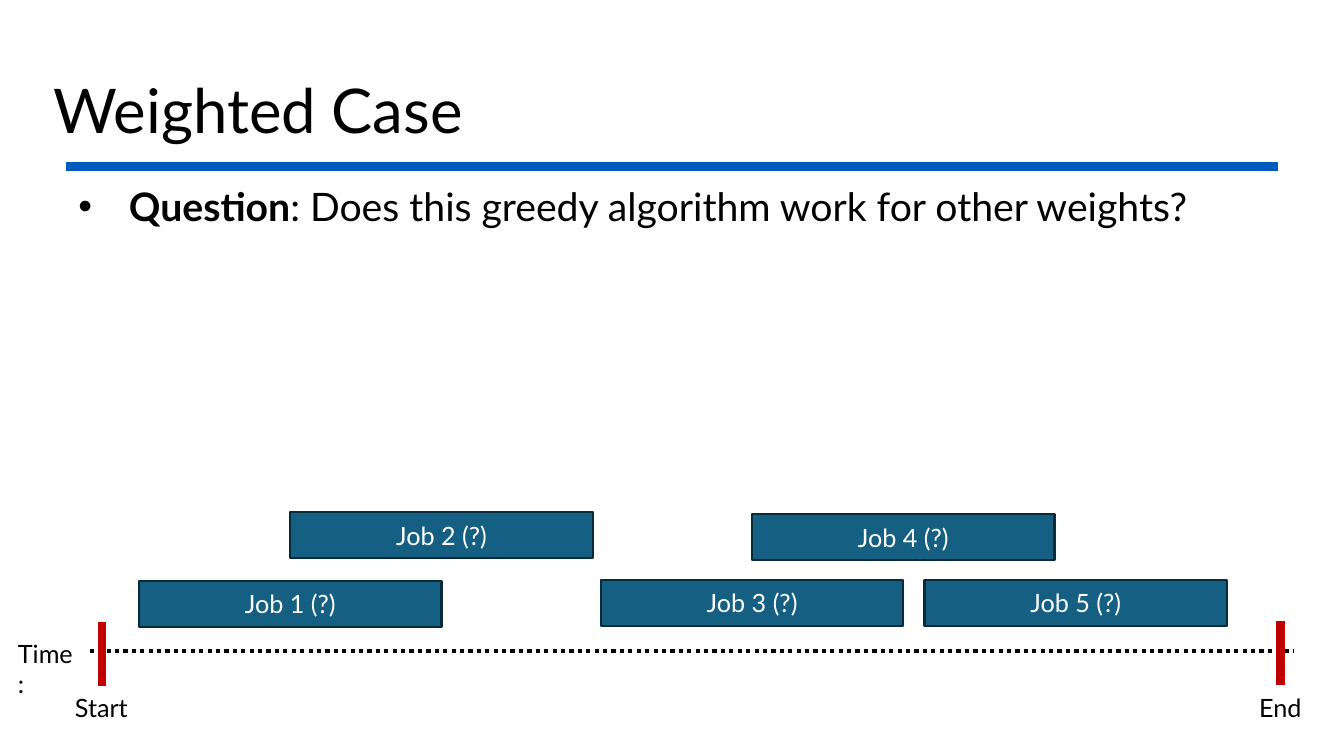
from lxml import etree
from pptx import Presentation
from pptx import util as u
from pptx.dml.color import RGBColor
from pptx.enum import dml, shapes, text
from pptx.oxml.ns import qn

FONT = "Lato"
COLORS = {"ink": "000000", "rule": "005BBC", "mark": "C00000",
          "job": "156082", "edge": "092A39", "light": "FFFFFF"}
TITLE = "Weighted Case"
QUESTION = [("Question", True),
            (": Does this greedy algorithm work for other weights?", False)]
JOBS = [("Job 1 (?)", 1.38, 5.76), ("Job 2 (?)", 2.88, 5.08),
        ("Job 3 (?)", 5.96, 5.75), ("Job 4 (?)", 7.46, 5.1),
        ("Job 5 (?)", 9.17, 5.75)]
JOB_SIZE = (3, 0.46)
MARKS = [("Start", 1.01, 6.17, 0.73), ("End", 12.7, 6.16, 0.62)]
MARK_HEIGHT = 0.64
LABEL_TOP, LABEL_HEIGHT = 6.82, 0.4
AXIS = (0.89, 12.83, 6.46)
RULE = (0.65, 12.68, 1.65)


def color(name):
    return RGBColor.from_string(COLORS[name])


def inches(*lengths):
    return [u.Inches(length) for length in lengths]


def write(shape, runs, size=18, ink="ink", align=text.PP_ALIGN.LEFT,
          anchor=text.MSO_ANCHOR.TOP, wrap=True):
    frame = shape.text_frame
    frame.word_wrap = wrap
    frame.auto_size = text.MSO_AUTO_SIZE.NONE
    frame.vertical_anchor = anchor
    para = frame.paragraphs[0]
    para.alignment = align
    for words, bold in runs:
        span = para.add_run()
        span.text = words
        span.font.name = FONT
        span.font.size = u.Pt(size)
        span.font.bold = bold
        span.font.color.rgb = color(ink)
    return para


def add_text(page, area, runs, **style):
    return write(page.shapes.add_textbox(*inches(*area)), runs, **style)


def add_line(page, start, end, ink, width, dash=None):
    line = page.shapes.add_connector(
        shapes.MSO_CONNECTOR.STRAIGHT, *inches(*start, *end))
    line.line.color.rgb = color(ink)
    line.line.width = u.Pt(width)
    if dash:
        line.line.dash_style = dash
    etree.SubElement(line._element.spPr, qn("a:effectLst"))


def add_bullet(para, indent):
    props = para._p.get_or_add_pPr()
    props.set("marL", str(u.Inches(indent)))
    props.set("indent", str(u.Inches(-indent)))
    etree.SubElement(props, qn("a:buFont")).set("typeface", "Arial")
    etree.SubElement(props, qn("a:buChar")).set("char", "•")


def add_job(page, name, left, top):
    box = page.shapes.add_shape(
        shapes.MSO_SHAPE.RECTANGLE, *inches(left, top, *JOB_SIZE))
    box.shadow.inherit = False
    box.fill.solid()
    box.fill.fore_color.rgb = color("job")
    box.line.color.rgb = color("edge")
    box.line.width = u.Pt(1.5)
    write(box, [(name, False)], ink="light", align=text.PP_ALIGN.CENTER,
          anchor=text.MSO_ANCHOR.MIDDLE)


def main():
    deck = Presentation()
    deck.slide_width, deck.slide_height = inches(13.33, 7.5)
    page = deck.slides.add_slide(deck.slide_layouts[5])

    title = page.shapes.title
    title.left, title.top, title.width, title.height = inches(0.43, 0.4, 12.71, 1.45)
    heading = write(title, [(TITLE, False)], size=44, anchor=text.MSO_ANCHOR.MIDDLE)
    heading.line_spacing = 0.9

    left, right, level = RULE
    add_line(page, (left, level), (right, level), "rule", 6)
    question = add_text(page, (0.68, 1.76, 12.02, 3.8), QUESTION, size=28)
    add_bullet(question, 0.5)

    left, right, level = AXIS
    add_line(page, (left, level), (right, level), "ink", 3,
             dml.MSO_LINE.ROUND_DOT)
    for name, center, top, width in MARKS:
        add_line(page, (center, top), (center, top + MARK_HEIGHT), "mark", 6)
        add_text(page, (center - width / 2, LABEL_TOP, width, LABEL_HEIGHT),
                 [(name, False)], wrap=False)
    add_text(page, (0.08, 6.28, 0.8, LABEL_HEIGHT), [("Time:", False)])

    for job in JOBS:
        add_job(page, *job)
    deck.save("out.pptx")


if __name__ == "__main__":
    main()
